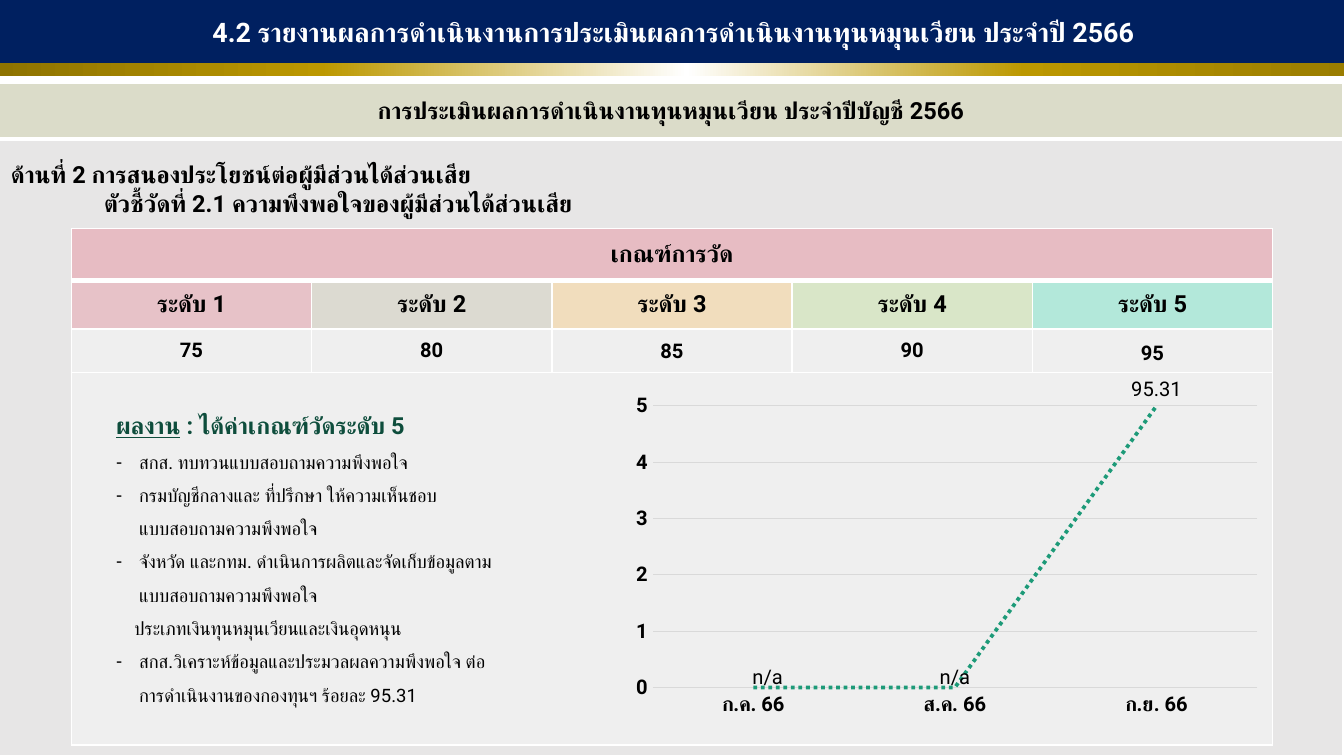
import pptx
import pptx.chart.data
import pptx.dml.color
import pptx.enum.chart
import pptx.enum.dml
import pptx.enum.shapes
import pptx.enum.text
import pptx.oxml
import pptx.oxml.ns
import pptx.util
from lxml import etree

Inches = pptx.util.Inches
Pt = pptx.util.Pt
qn = pptx.oxml.ns.qn
CENTER = pptx.enum.text.PP_ALIGN.CENTER
MIDDLE = pptx.enum.text.MSO_ANCHOR.MIDDLE

COLORS = {
    "navy": "002060", "white": "FFFFFF", "black": "000000", "green": "0E4D3C",
    "khaki": "DBDCC9", "gray": "E7E6E6", "pale": "F2F2F2", "grid": "D9D9D9",
    "trend": "1D9A78", "pink": "E8ABB5", "stone": "D6D2C4", "peach": "F9D8A3",
    "lime": "D1E6B5", "mint": "91EAD2",
}
GOLD_STOPS = [(0, "8E7300"), (24, "BC9800"), (51, "FFFFFF"), (76, "BC9800"), (100, "9A7D00")]
LEVELS = [
    ("ระดับ 1", "pink", "75", 1.0),
    ("ระดับ 2", "stone", "80", 1.0),
    ("ระดับ 3", "peach", "85", 1.07),
    ("ระดับ 4", "lime", "90", 1.0),
    ("ระดับ 5", "mint", "95", 1.2),
]
RESULTS = [
    ("สกส. ทบทวนแบบสอบถามความพึงพอใจ", True),
    ("กรมบัญชีกลางและ ที่ปรึกษา ให้ความเห็นชอบแบบสอบถามความพึงพอใจ", True),
    ("จังหวัด และกทม. ดำเนินการผลิตและจัดเก็บข้อมูลตามแบบสอบถามความพึงพอใจ", True),
    ("ประเภทเงินทุนหมุนเวียนและเงินอุดหนุน", False),
    ("สกส.วิเคราะห์ข้อมูลและประมวลผลความพึงพอใจ ต่อการดำเนินงานของกองทุนฯ ร้อยละ 95.31", True),
]


def rgb(name):
    return pptx.dml.color.RGBColor.from_string(COLORS[name])


def add_layout(parent, index, **values):
    for old in parent.findall(qn("c:layout")):
        parent.remove(old)
    layout = etree.Element(qn("c:layout"))
    manual = etree.SubElement(layout, qn("c:manualLayout"))
    for tag, value in values.items():
        etree.SubElement(manual, qn("c:" + tag)).set("val", str(value))
    parent.insert(index, layout)


class SlideBuilder:
    face = "Roboto"

    def __init__(self, deck):
        self.slide = deck.slides.add_slide(deck.slide_layouts[1])
        self.shapes = self.slide.shapes

    def style(self, font, size, color="black", bold=True):
        font.name, font.size, font.bold = self.face, Pt(size), bold
        font.color.rgb = rgb(color)
        etree.SubElement(font._rPr, qn("a:cs")).set("typeface", self.face)

    def indent(self, paragraph, margin=0.0, hanging=0.0, bullet=None):
        props = paragraph._p.get_or_add_pPr()
        props.set("marL", str(Inches(margin)))
        props.set("indent", str(-Inches(hanging)))
        if bullet:
            etree.SubElement(props, qn("a:buChar")).set("char", bullet)
        else:
            etree.SubElement(props, qn("a:buNone"))

    def place(self, shape, left, top, width, height):
        shape.left, shape.top = Inches(left), Inches(top)
        shape.width, shape.height = Inches(width), Inches(height)
        self.shapes._spTree.append(shape._element)

    def table(self, left, top, widths, heights):
        grid = self.shapes.add_table(len(heights), len(widths), Inches(left), Inches(top),
                                     Inches(sum(widths)), Inches(sum(heights))).table
        grid.first_row = grid.horz_banding = False
        for column, width in zip(grid.columns, widths):
            column.width = Inches(width)
        for row, height in zip(grid.rows, heights):
            row.height = Inches(height)
        return grid

    def cell(self, cell, fill, opacity=100, top=1, bottom=1):
        cell.fill.solid()
        cell.fill.fore_color.rgb = rgb(fill)
        props = cell._tc.get_or_add_tcPr()
        if opacity < 100:
            alpha = etree.SubElement(props.find(".//" + qn("a:srgbClr")), qn("a:alpha"))
            alpha.set("val", str(opacity * 1000))
        for index, (side, width) in enumerate(zip("LRTB", (1, 1, top, bottom))):
            line = etree.Element(qn("a:ln" + side), w=str(Pt(width)))
            paint = etree.SubElement(line, qn("a:solidFill"))
            etree.SubElement(paint, qn("a:srgbClr")).set("val", COLORS["white"])
            props.insert(index, line)

    def cell_text(self, cell, text, size=14, spacing=1.0):
        cell.vertical_anchor = MIDDLE
        paragraph = cell.text_frame.paragraphs[0]
        paragraph.text = text
        paragraph.alignment = CENTER
        paragraph.line_spacing = spacing
        self.style(paragraph.font, size)

    def gold_band(self, left, top, width, height):
        band = self.shapes.add_shape(pptx.enum.shapes.MSO_SHAPE.RECTANGLE, Inches(left),
                                     Inches(top), Inches(width), Inches(height))
        band.shadow.inherit = False
        band.line.fill.background()
        band.fill.gradient()
        band.fill.gradient_angle = 0
        stops = band._element.spPr.find(".//" + qn("a:gsLst"))
        for old in list(stops):
            stops.remove(old)
        for position, color in GOLD_STOPS:
            stop = etree.SubElement(stops, qn("a:gs"), pos=str(position * 1000))
            etree.SubElement(stop, qn("a:srgbClr")).set("val", color)

    def title(self, text, *box):
        title = self.shapes.title
        self.place(title, *box)
        title.fill.solid()
        title.fill.fore_color.rgb = rgb("navy")
        frame = title.text_frame
        frame.auto_size = pptx.enum.text.MSO_AUTO_SIZE.NONE
        frame.vertical_anchor = MIDDLE
        frame.text = text
        frame.paragraphs[0].alignment = CENTER
        self.style(frame.paragraphs[0].font, 16, "white")

    def results(self, label, outcome, items, *box):
        body = self.slide.placeholders[1]
        self.place(body, *box)
        frame = body.text_frame
        frame.word_wrap = True
        frame.auto_size = pptx.enum.text.MSO_AUTO_SIZE.NONE
        frame.margin_right = Inches(0.2)
        heading = frame.paragraphs[0]
        self.indent(heading)
        heading.space_before = Pt(0)
        self.style(heading.font, 14, "green")
        underlined = heading.add_run()
        underlined.text = label
        underlined.font.underline = True
        heading.add_run().text = outcome
        for text, bulleted in items:
            item = frame.add_paragraph()
            item.text = text
            if bulleted:
                self.indent(item, 0.19, 0.19, "-")
            else:
                self.indent(item, 0.15)
            item.space_before = Pt(0)
            item.line_spacing = 1.5
            self.style(item.font, 11, bold=False)

    def line_chart(self, months, scores, labels, left, top, width, height):
        data = pptx.chart.data.CategoryChartData()
        data.categories = months
        data.add_series("Series 1", scores)
        chart = self.shapes.add_chart(pptx.enum.chart.XL_CHART_TYPE.LINE, Inches(left),
                                      Inches(top), Inches(width), Inches(height), data).chart
        chart.has_legend = chart.has_title = False
        self.style(chart.font, 12, "navy")
        for axis in (chart.category_axis, chart.value_axis):
            axis.major_tick_mark = axis.minor_tick_mark = pptx.enum.chart.XL_TICK_MARK.NONE
            self.style(axis.tick_labels.font, 12)
        levels = chart.value_axis
        levels.minimum_scale, levels.maximum_scale, levels.major_unit = 0, 5, 1
        levels.format.line.fill.background()
        for line in (chart.category_axis.format.line, levels.major_gridlines.format.line):
            line.color.rgb = rgb("grid")
            line.width = Pt(0.75)
        add_layout(chart._chartSpace.find(".//" + qn("c:plotArea")), 0, layoutTarget="inner",
                   xMode="edge", yMode="edge", x=0.14, y=0.094, w=0.839, h=0.766)
        chart.plots[0].vary_by_categories = False
        trend = chart.plots[0].series[0]
        trend.smooth = False
        trend.marker.style = pptx.enum.chart.XL_MARKER_STYLE.NONE
        trend.format.line.color.rgb = rgb("trend")
        trend.format.line.width = Pt(2.25)
        trend.format.line.dash_style = pptx.enum.dml.MSO_LINE.ROUND_DOT
        for index, (text, shift_x, shift_y) in enumerate(labels):
            label = trend.points[index].data_label
            label.text_frame.text = text
            self.style(label.text_frame.paragraphs[0].runs[0].font, 12, bold=False)
            label.position = pptx.enum.chart.XL_LABEL_POSITION.ABOVE
            add_layout(label._dLbl, 1, x=shift_x, y=shift_y)


def main():
    deck = pptx.Presentation()
    deck.slide_width, deck.slide_height = Inches(11.11), Inches(6.25)
    page = SlideBuilder(deck)

    section = page.table(-0.01, 0.69, [11.11], [0.46, 5.1])
    page.cell(section.cell(0, 0), "khaki", bottom=3)
    page.cell_text(section.cell(0, 0), "การประเมินผลการดำเนินงานทุนหมุนเวียน ประจำปีบัญชี 2566")
    topic = section.cell(1, 0)
    page.cell(topic, "gray", top=3)
    topic.margin_top = topic.margin_bottom = Inches(0.07)
    topic.text_frame.text = ("ด้านที่ 2 การสนองประโยชน์ต่อผู้มีส่วนได้ส่วนเสีย\n"
                             "ตัวชี้วัดที่ 2.1 ความพึงพอใจของผู้มีส่วนได้ส่วนเสีย")
    for line, margin, spacing in zip(topic.text_frame.paragraphs, (0, 0.77), (1.5, 1.0)):
        page.indent(line, margin)
        line.line_spacing = spacing
        line.space_after = Pt(0.5)
        page.style(line.font, 14)

    criteria = page.table(0.59, 1.89, [9.93 / 5] * 5, [0.43, 0.4, 0.36, 3.08])
    for column, (level, color, score, spacing) in enumerate(LEVELS):
        page.cell(criteria.cell(0, column), "pink", 70, bottom=3)
        page.cell(criteria.cell(1, column), color, 60, top=3)
        page.cell_text(criteria.cell(1, column), level)
        page.cell(criteria.cell(2, column), "pale", 80)
        page.cell_text(criteria.cell(2, column), score, 12, spacing)
        page.cell(criteria.cell(3, column), "pale", 80)
    for row in (0, 3):
        criteria.cell(row, 0).merge(criteria.cell(row, 4))
    page.cell_text(criteria.cell(0, 0), "เกณฑ์การวัด")

    page.gold_band(-0.01, 0, 11.15, 0.63)
    page.title("4.2 รายงานผลการดำเนินงานการประเมินผลการดำเนินงานทุนหมุนเวียน ประจำปี 2566",
               -0.01, 0, 11.15, 0.52)
    page.results("ผลงาน", " : ได้ค่าเกณฑ์วัดระดับ 5", RESULTS, 0.86, 3.35, 3.46, 2.56)
    page.line_chart(["ก.ค. 66", "ส.ค. 66", "ก.ย. 66"], [0, 0, 5],
                    [("n/a", 0.02, 0.02), ("n/a", 0, 0.02), ("95.31", 0, 0)],
                    4.56, 3.07, 5.96, 3.04)
    deck.save("out.pptx")


if __name__ == "__main__":
    main()
